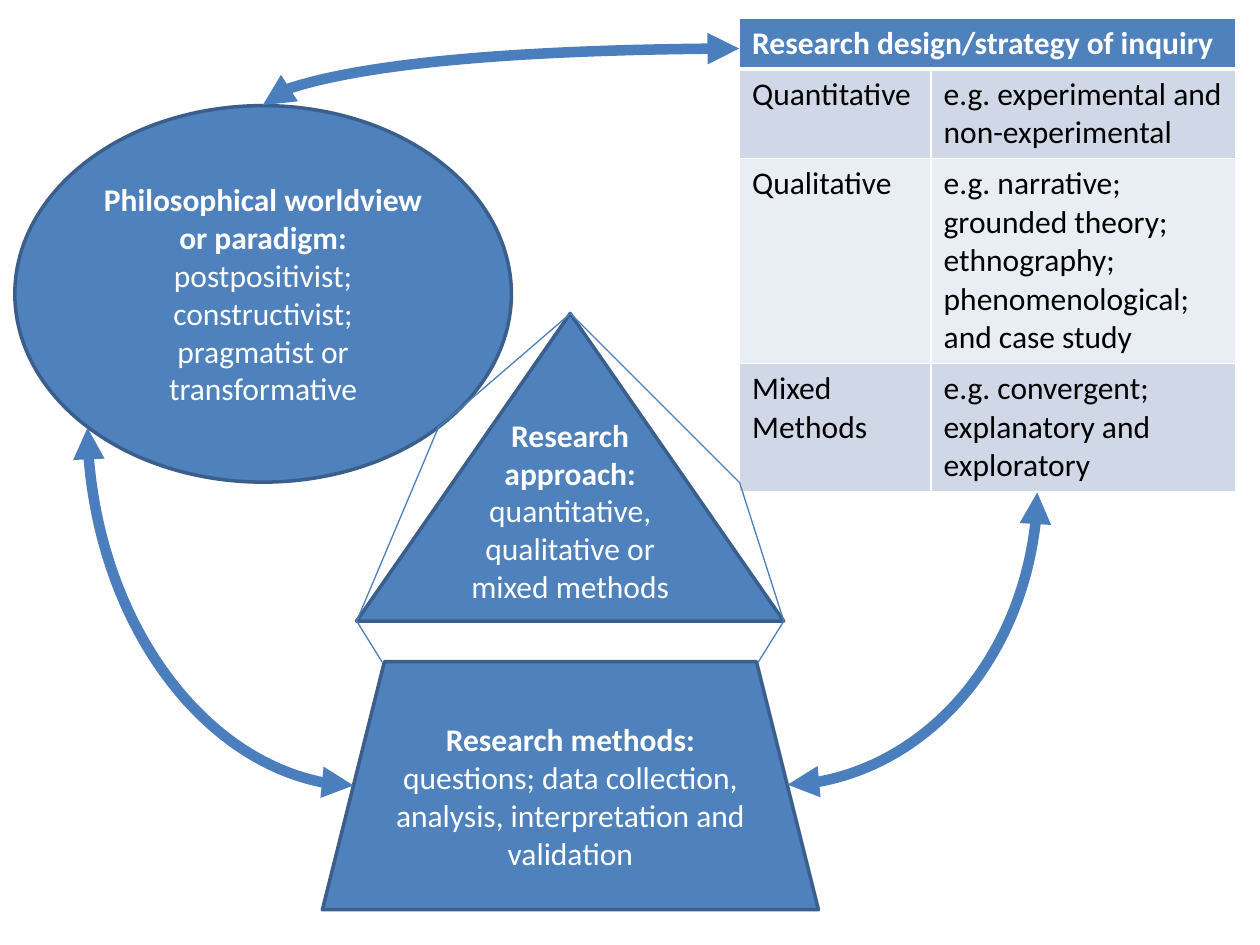
from lxml import etree
from pptx import Presentation
from pptx.dml.color import RGBColor
from pptx.enum.shapes import MSO_CONNECTOR, MSO_SHAPE
from pptx.enum.text import MSO_ANCHOR, MSO_AUTO_SIZE, PP_ALIGN
from pptx.oxml.ns import qn
from pptx.util import Cm, Pt

STRAIGHT, CURVE = MSO_CONNECTOR.STRAIGHT, MSO_CONNECTOR.CURVE
TRIANGLE = MSO_SHAPE.ISOSCELES_TRIANGLE
OVAL, TRAPEZOID = MSO_SHAPE.OVAL, MSO_SHAPE.TRAPEZOID
MIDDLE, CENTER = MSO_ANCHOR.MIDDLE, PP_ALIGN.CENTER
GROW = MSO_AUTO_SIZE.SHAPE_TO_FIT_TEXT

BLUE, OUTLINE, LINE = "4F81BD", "3A5F8C", "4B7EBC"
WHITE, BLACK = "FFFFFF", "000000"
BANDS = ["D0D8E8", "E9EDF4"]

ROWS = [
    ("Quantitative", ["e.g. experimental and", "non-experimental"]),
    ("Qualitative", ["e.g. narrative;\vgrounded theory; ethnography; "
                     "phenomenological;\vand case study"]),
    ("Mixed Methods", ["e.g. convergent; explanatory and exploratory"]),
]


def color(hex_value):
    return RGBColor.from_string(hex_value)


def set_font(font, hex_value, bold=False):
    font.name, font.size, font.bold = "Calibri", Pt(18), bold
    font.color.rgb = color(hex_value)


def add_figure(shapes, kind, x, y, w, h):
    sp = shapes.add_shape(kind, Cm(x), Cm(y), Cm(w), Cm(h))
    sp.shadow.inherit = False
    sp.fill.solid()
    sp.fill.fore_color.rgb = color(BLUE)
    sp.line.color.rgb = color(OUTLINE)
    sp.line.width = Pt(2)
    return sp


def write_label(sp, title, body):
    """Bold title followed by plain text in one centred paragraph."""
    p = sp.text_frame.paragraphs[0]
    p.alignment = CENTER
    for text, bold in ((title, True), (body, False)):
        for i, part in enumerate(text.split("\n")):
            if i:
                p.add_line_break()
            if part:
                r = p.add_run()
                r.text = part
                set_font(r.font, WHITE, bold)
    set_font(p.font, WHITE)


def add_line(s, start, end, kind=STRAIGHT, width=0.75):
    c = s.shapes.add_connector(kind, *(Cm(v) for v in (*start, *end)))
    c.line.color.rgb = color(LINE)
    c.line.width = Pt(width)
    etree.SubElement(c._element.spPr, qn("a:effectLst"))
    return c


def add_curved_arrow(s, x, y, w, h, turn, flips):
    """Quarter curve with arrowheads at both ends."""
    c = add_line(s, (x, y), (x + w, y + h), CURVE, 6)
    spPr = c._element.spPr
    spPr.find(qn("a:prstGeom")).set("prst", "curvedConnector2")
    xfrm = spPr.find(qn("a:xfrm"))
    xfrm.set("rot", str(turn * 60000))
    for axis in flips:
        xfrm.set("flip" + axis, "1")
    ln = spPr.find(qn("a:ln"))
    for end in ("a:headEnd", "a:tailEnd"):
        etree.SubElement(ln, qn(end), type="triangle")


def set_borders(cell, bottom):
    tcPr = cell._tc.get_or_add_tcPr()
    for i, side in enumerate("LRTB"):
        width = bottom if side == "B" else 1
        ln = etree.Element(qn("a:ln" + side), w=str(Pt(width)))
        fill = etree.SubElement(ln, qn("a:solidFill"))
        etree.SubElement(fill, qn("a:srgbClr"), val=WHITE)
        tcPr.insert(i, ln)


def fill_cell(cell, paragraphs, fill, ink, bold=False, bottom=1):
    cell.fill.solid()
    cell.fill.fore_color.rgb = color(fill)
    tf = cell.text_frame
    for i, text in enumerate(paragraphs):
        p = tf.add_paragraph() if i else tf.paragraphs[0]
        p.text = text
        set_font(p.font, ink, bold)
    set_borders(cell, bottom)


def add_design_table(s):
    table = s.shapes.add_table(len(ROWS) + 1, 2, Cm(14.91), Cm(0.36),
                               Cm(10.01), Cm(9.5)).table
    for column, width in zip(table.columns, (3.86, 6.15)):
        column.width = Cm(width)
    for row, height in zip(table.rows, (1.03, 1.8, 4.1, 2.57)):
        row.height = Cm(height)
    table.cell(0, 0).merge(table.cell(0, 1))
    fill_cell(table.cell(0, 0), ["Research design/strategy of inquiry"],
              BLUE, WHITE, True, 3)
    fill_cell(table.cell(0, 1), [], BLUE, WHITE, True, 3)
    for i, (name, examples) in enumerate(ROWS):
        band = BANDS[i % 2]
        fill_cell(table.cell(i + 1, 0), [name], band, BLACK)
        fill_cell(table.cell(i + 1, 1), examples, band, BLACK)


def add_approach(s):
    group = s.shapes.add_group_shape().shapes
    add_figure(group, TRIANGLE, 7.19, 6.32, 8.61, 6.2)
    box = group.add_textbox(Cm(9.22), Cm(8.26), Cm(4.55), Cm(4.88))
    box.text_frame.word_wrap = False
    box.text_frame.auto_size = GROW
    write_label(box, "Research\napproach:\n",
                "quantitative,\nqualitative or\nmixed methods")


def main():
    prs = Presentation()
    prs.slide_width, prs.slide_height = Cm(25.4), Cm(19.05)
    s = prs.slides.add_slide(prs.slide_layouts[6])

    # Table and central triangle
    add_design_table(s)
    add_approach(s)

    # Worldview and methods
    worldview = add_figure(s.shapes, OVAL, 0.3, 2.13, 10.01, 7.59)
    write_label(worldview, "Philosophical worldview or paradigm: ",
                "postpositivist; constructivist;\npragmatist or transformative")
    methods = add_figure(s.shapes, TRAPEZOID, 6.5, 13.34, 10, 5)
    write_label(methods, "Research methods:\n",
                "questions; data collection, analysis, "
                "interpretation and validation")
    for sp in (worldview, methods):
        sp.text_frame.word_wrap = True
        sp.text_frame.vertical_anchor = MIDDLE

    # Two-way arrows between the outer parts
    add_curved_arrow(s, 0.84, 9.55, 7.21, 5.36, 270, "H")
    add_curved_arrow(s, 9.53, -3.25, 1.14, 9.6, 90, "HV")
    add_curved_arrow(s, 15.88, 9.93, 5.03, 5.89, 0, "V")

    # Thin lines from the triangle's corners to its neighbours
    apex, left, right = (11.5, 6.32), (7.19, 12.52), (15.8, 12.52)
    table_corner, oval_edge = (14.91, 9.73), (8.84, 8.61)
    for start, end in ((left, (7.7, 13.34)), (right, (15.29, 13.34)),
                       (apex, table_corner), (right, table_corner),
                       (left, oval_edge), (apex, oval_edge)):
        add_line(s, start, end)

    prs.save("out.pptx")


if __name__ == "__main__":
    main()
